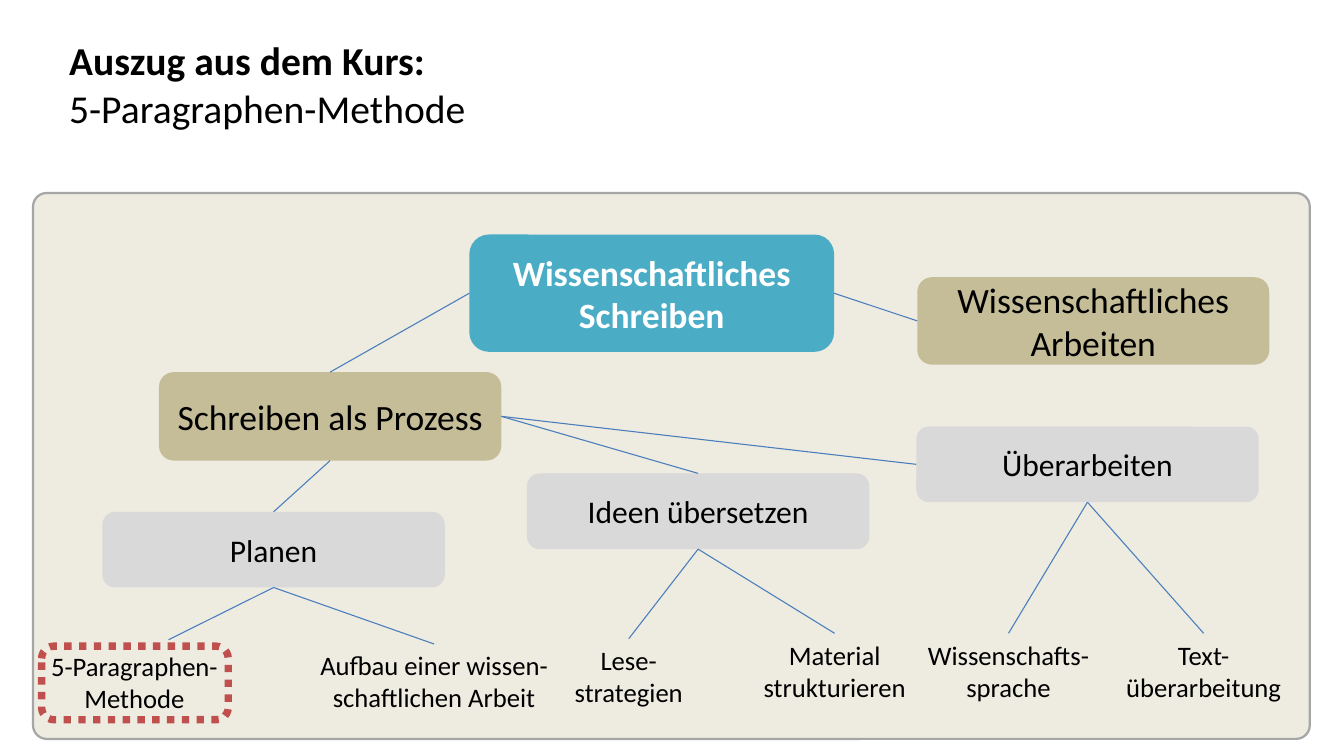
from dataclasses import dataclass
from typing import Any, Optional

from lxml import etree
from pptx import Presentation
from pptx.dml.color import RGBColor
from pptx.enum import dml, shapes, text
from pptx.oxml import ns
from pptx.util import Inches, Pt


@dataclass(frozen=True)
class Theme:
    font: str = "Calibri"
    black: str = "000000"
    white: str = "FFFFFF"
    panel: str = "EEECE1"
    border: str = "A6A6A6"
    root: str = "4BACC6"
    branch: str = "C4BD97"
    step: str = "D9D9D9"
    link: str = "4B7EBC"
    mark: str = "C0504D"
    title: float = 26.7
    large: float = 24
    medium: float = 21.3
    small: float = 18


@dataclass(frozen=True)
class Box:
    name: str
    words: str
    left: float
    top: float
    width: float
    height: float
    size: float
    fill: Optional[str] = None
    color: str = Theme.black
    bold: bool = False
    inset: float = 0.1
    wrap: bool = True


@dataclass(frozen=True)
class Link:
    start: str
    exit: int
    goal: str
    entry: int


TOP, LEFT, BOTTOM, RIGHT = range(4)
THEME = Theme()


def topic(name: str, words: str, left: float, top: float) -> Box:
    return Box(name, words, left, top, 3.21, 0.71, THEME.medium, THEME.step)


def leaf(name: str, words: str, left: float, top: float, width: float,
         wrap: bool = False) -> Box:
    return Box(name, words, left, top, width, 0.71, THEME.small, wrap=wrap)


BOXES = [
    Box("root", "Wissenschaftliches Schreiben", 4.4, 2.2, 3.42, 1.1,
        THEME.large, THEME.root, THEME.white, True, 0.05),
    Box("process", "Schreiben als Prozess", 1.49, 3.49, 3.21, 0.83,
        THEME.large, THEME.branch),
    Box("work", "Wissenschaftliches Arbeiten", 8.6, 2.6, 3.3, 0.82,
        THEME.large, THEME.branch),
    topic("plan", "Planen", 0.96, 4.8),
    topic("ideas", "Ideen übersetzen", 4.94, 4.44),
    topic("revise", "Überarbeiten", 8.59, 4),
    leaf("method", "5-Paragraphen-\nMethode", 0.37, 6.05, 1.78),
    leaf("outline", "Aufbau einer wissen-schaftlichen Arbeit", 2.35, 6.04, 3.44, True),
    leaf("reading", "Lese-\nstrategien", 5.28, 5.99, 1.23),
    leaf("matter", "Material\nstrukturieren", 7.05, 5.94, 1.55),
    leaf("language", "Wissenschafts-\nsprache", 8.59, 5.94, 1.73),
    leaf("polish", "Text-\vüberarbeitung", 10.45, 5.94, 1.67),
]

LINKS = [
    Link("root", LEFT, "process", TOP),
    Link("root", RIGHT, "work", LEFT),
    Link("process", BOTTOM, "plan", TOP),
    Link("process", RIGHT, "ideas", TOP),
    Link("process", RIGHT, "revise", LEFT),
    Link("plan", BOTTOM, "outline", TOP),
    Link("ideas", BOTTOM, "reading", TOP),
    Link("ideas", BOTTOM, "matter", TOP),
    Link("revise", BOTTOM, "language", TOP),
    Link("revise", BOTTOM, "polish", TOP),
]


def apply(target: Any, values: dict[str, Any]) -> None:
    for key, value in values.items():
        setattr(target, key, value)


def paint(font: Any, size: float, color: str, bold: bool) -> None:
    apply(font, {"name": THEME.font, "size": Pt(size), "bold": bold})
    font.color.rgb = RGBColor.from_string(color)


def round_box(slide: Any, left: float, top: float, width: float, height: float,
              fill: Optional[str]) -> Any:
    shape = slide.shapes.add_shape(
        shapes.MSO_SHAPE.ROUNDED_RECTANGLE,
        Inches(left), Inches(top), Inches(width), Inches(height))
    shape.shadow.inherit = False
    if fill:
        shape.fill.solid()
        shape.fill.fore_color.rgb = RGBColor.from_string(fill)
    else:
        shape.fill.background()
    shape.line.fill.background()
    return shape


def outline(shape: Any, color: str, width: float) -> None:
    shape.line.color.rgb = RGBColor.from_string(color)
    shape.line.width = Pt(width)


def draw_box(slide: Any, box: Box) -> Any:
    place = box.left, box.top, box.width, box.height
    if box.fill:
        shape = round_box(slide, *place, box.fill)
    else:
        shape = slide.shapes.add_textbox(*map(Inches, place))
    frame = shape.text_frame
    frame.text = box.words
    apply(frame, {
        "word_wrap": box.wrap,
        "vertical_anchor": text.MSO_ANCHOR.MIDDLE if box.fill else text.MSO_ANCHOR.TOP,
        "margin_left": Inches(box.inset),
        "margin_right": Inches(box.inset),
        "margin_top": Inches(0.05),
        "margin_bottom": Inches(0.05),
    })
    if not box.fill:
        frame.auto_size = text.MSO_AUTO_SIZE.SHAPE_TO_FIT_TEXT
    for para in frame.paragraphs:
        para.alignment = text.PP_ALIGN.CENTER
        for run in para.runs:
            paint(run.font, box.size, box.color, box.bold)
    return shape


def draw_line(slide: Any, start: tuple[float, float] = (0, 0),
              goal: tuple[float, float] = (0, 0)) -> Any:
    line = slide.shapes.add_connector(
        shapes.MSO_CONNECTOR.STRAIGHT, *map(Inches, start + goal))
    outline(line, THEME.link, 0.75)
    etree.SubElement(line._element.spPr, ns.qn("a:effectLst"))
    return line


def draw_title(slide: Any) -> None:
    box = slide.shapes.add_textbox(Inches(0.55), Inches(0.29), Inches(12), Inches(1))
    box.text_frame.word_wrap = True
    para = box.text_frame.paragraphs[0]
    for words, bold in (("Auszug aus dem Kurs:", True), ("5-Paragraphen-Methode", False)):
        if para.runs:
            para.add_line_break()
        run = para.add_run()
        run.text = words
        paint(run.font, THEME.title, THEME.black, bold)


def main() -> None:
    deck = Presentation()
    apply(deck, {"slide_width": Inches(12.6), "slide_height": Inches(7.09)})
    slide = deck.slides.add_slide(deck.slide_layouts[6])
    draw_title(slide)
    panel = round_box(slide, 0.31, 1.81, 11.97, 5.12, THEME.panel)
    panel.adjustments[0] = 0.025
    outline(panel, THEME.border, 1.5)
    nodes = {box.name: draw_box(slide, box) for box in BOXES}
    for link in LINKS:
        line = draw_line(slide)
        line.begin_connect(nodes[link.start], link.exit)
        line.end_connect(nodes[link.goal], link.entry)
    stem = draw_line(slide, (2.56, 5.51), (1.58, 6))
    stem.begin_connect(nodes["plan"], BOTTOM)
    mark = round_box(slide, 0.39, 6.06, 1.75, 0.69, None)
    outline(mark, THEME.mark, 5)
    mark.line.dash_style = dml.MSO_LINE.ROUND_DOT
    deck.save("out.pptx")


if __name__ == "__main__":
    main()
